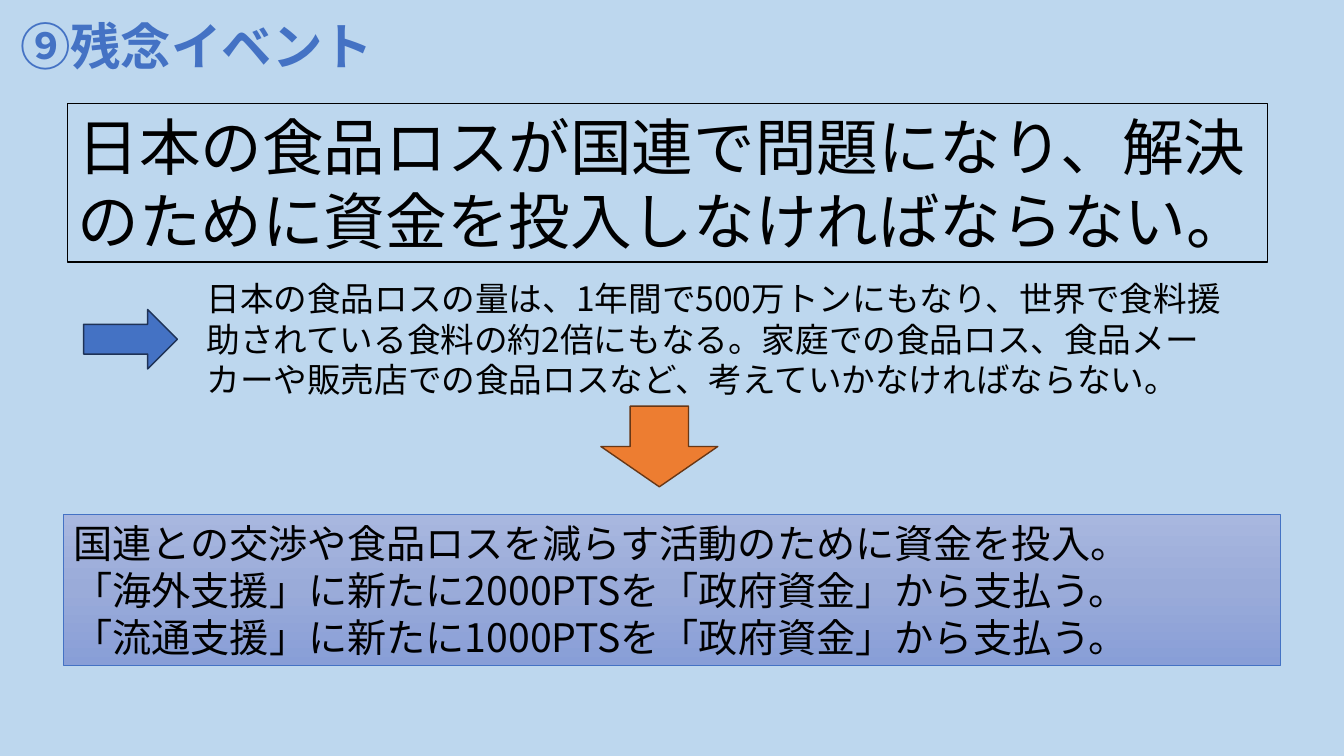
import copy

import pptx
import pptx.dml.color
import pptx.enum.lang
import pptx.enum.shapes
import pptx.enum.text
import pptx.oxml
import pptx.oxml.ns
import pptx.util

RGBColor = pptx.dml.color.RGBColor
SHAPE = pptx.enum.shapes.MSO_SHAPE
ALIGN = pptx.enum.text.PP_ALIGN
ANCHOR = pptx.enum.text.MSO_ANCHOR

PX = 9144  # EMU in one px, 100 px to the inch
FONT = "Noto Sans CJK JP"

SKY = RGBColor(0xBD, 0xD7, 0xEE)
BLACK = RGBColor(0x00, 0x00, 0x00)
BLUE = RGBColor(0x44, 0x72, 0xC4)
NAVY = RGBColor(0x1E, 0x32, 0x56)
ORANGE = RGBColor(0xED, 0x7D, 0x31)
BROWN = RGBColor(0x68, 0x37, 0x15)
PANEL_TOP = RGBColor(0xA8, 0xB7, 0xDF)
PANEL_MIDDLE = RGBColor(0x9A, 0xAB, 0xD9)
PANEL_BOTTOM = RGBColor(0x88, 0x9E, 0xD7)

EVENT = "日本の食品ロスが国連で問題になり、解決のために資金を投入しなければならない。"
BACKGROUND = (
    "日本の食品ロスの量は、1年間で500万トンにもなり、世界で食料援助されている食料の約2倍にもなる。"
    "家庭での食品ロス、食品メーカーや販売店での食品ロスなど、考えていかなければならない。"
)
ACTIONS = [
    "国連との交渉や食品ロスを減らす活動のために資金を投入。",
    "「海外支援」に新たに2000PTSを「政府資金」から支払う。",
    "「流通支援」に新たに1000PTSを「政府資金」から支払う。",
]


def to_emu(box):
    return [length * PX for length in box]


def add_run(paragraph, text, size, color, bold):
    run = paragraph.add_run()
    run.text = text
    font = run.font
    font.name = FONT
    font.size = pptx.util.Pt(size)
    font.color.rgb = color
    font.bold = bold
    font.language_id = pptx.enum.lang.MSO_LANGUAGE_ID.JAPANESE
    # The East Asian typeface follows the Latin one
    east_asian = pptx.oxml.parse_xml(
        f'<a:ea {pptx.oxml.ns.nsdecls("a")} typeface="{FONT}"/>'
    )
    font._element.find(pptx.oxml.ns.qn("a:latin")).addnext(east_asian)


def write_text(shape, lines, size, color=BLACK, bold=False,
               align=ALIGN.LEFT, anchor=ANCHOR.TOP, wrap=True):
    frame = shape.text_frame
    frame.word_wrap = wrap
    frame.auto_size = pptx.enum.text.MSO_AUTO_SIZE.SHAPE_TO_FIT_TEXT
    frame.vertical_anchor = anchor
    for index, line in enumerate(lines):
        paragraph = frame.add_paragraph() if index else frame.paragraphs[0]
        paragraph.alignment = align
        add_run(paragraph, line, size, color, bold)


def add_text(slide, box, lines, size, **style):
    write_text(slide.shapes.add_textbox(*to_emu(box)), lines, size, **style)


def add_shape(slide, kind, box, line_color, line_width=1, fill_color=None):
    shape = slide.shapes.add_shape(kind, *to_emu(box))
    shape.shadow.inherit = False
    if fill_color is None:
        shape.fill.background()
    else:
        shape.fill.solid()
        shape.fill.fore_color.rgb = fill_color
    shape.line.color.rgb = line_color
    shape.line.width = pptx.util.Pt(line_width)
    return shape


def fill_downward(shape, top, middle, bottom):
    fill = shape.fill
    fill.gradient()
    fill.gradient_angle = 270
    # A third stop goes between the two default ones
    first = shape._element.spPr.find(".//" + pptx.oxml.ns.qn("a:gs"))
    first.addnext(copy.deepcopy(first))
    for stop, position, color in zip(
        fill.gradient_stops, (0, 0.5, 1), (top, middle, bottom)
    ):
        stop.position = position
        stop.color.rgb = color


def main():
    presentation = pptx.Presentation()
    presentation.slide_width = 1333 * PX
    presentation.slide_height = 750 * PX
    slide = presentation.slides.add_slide(presentation.slide_layouts[6])
    slide.background.fill.solid()
    slide.background.fill.fore_color.rgb = SKY

    # Event
    event = add_shape(slide, SHAPE.RECTANGLE, (67, 103, 1190, 157), BLACK)
    write_text(event, [EVENT], 44, anchor=ANCHOR.MIDDLE)

    # Background facts
    add_text(slide, (195, 271, 1027, 132), [BACKGROUND], 24)

    # Arrows
    add_shape(slide, SHAPE.RIGHT_ARROW, (83, 307, 93, 59), NAVY, fill_color=BLUE)
    add_shape(slide, SHAPE.DOWN_ARROW, (596, 403, 116, 80), BROWN, fill_color=ORANGE)

    # Title
    add_text(slide, (10, 10, 370, 73), ["⑨残念イベント"], 36, color=BLUE,
             bold=True, align=ALIGN.CENTER, wrap=False)

    # Actions to take
    actions = add_shape(slide, SHAPE.RECTANGLE, (63, 510, 1207, 150), BLUE, 0.5)
    fill_downward(actions, PANEL_TOP, PANEL_MIDDLE, PANEL_BOTTOM)
    write_text(actions, ACTIONS, 28, anchor=ANCHOR.MIDDLE)

    presentation.save("out.pptx")


if __name__ == "__main__":
    main()
